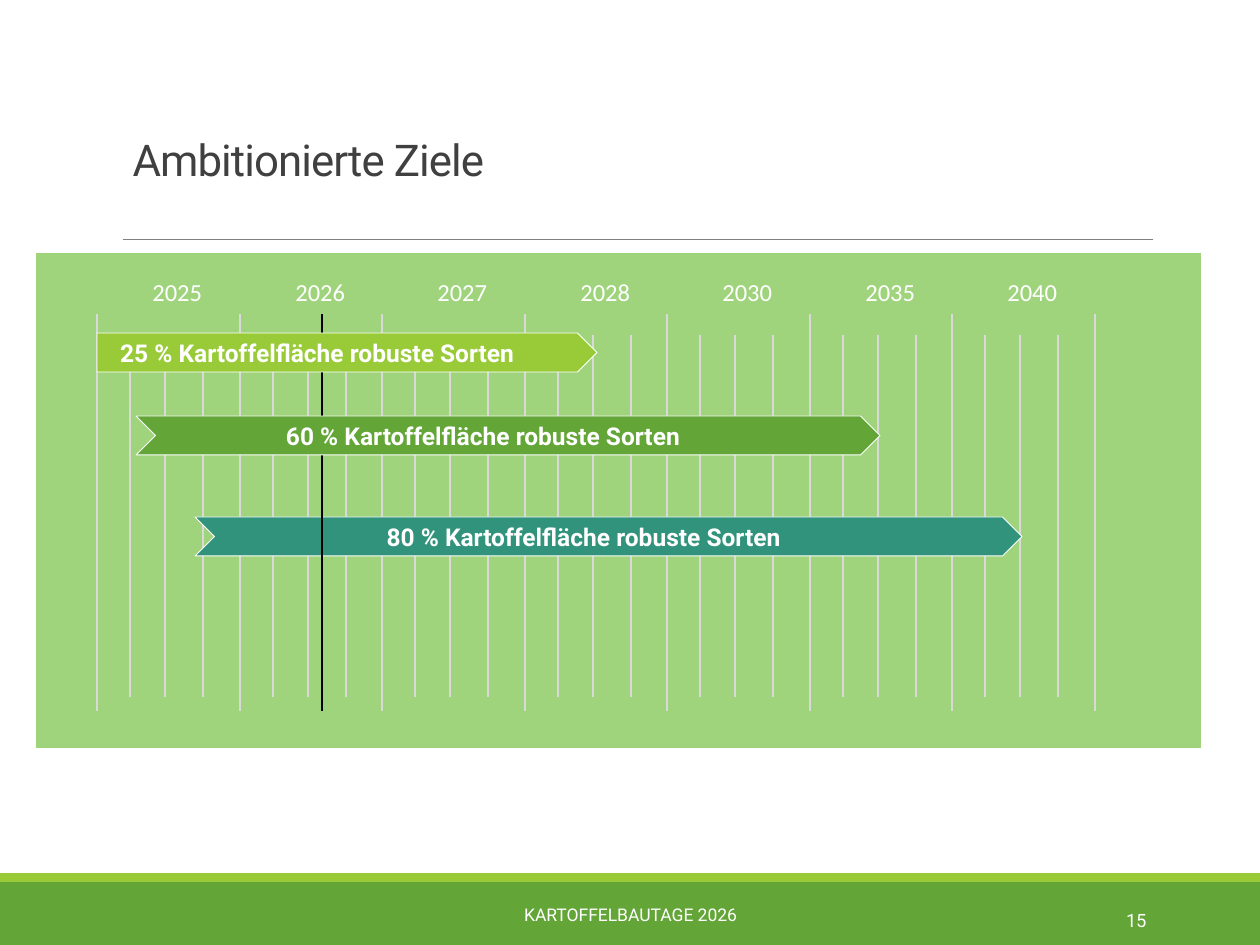
from lxml import etree
from pptx import Presentation
from pptx.dml.color import RGBColor
from pptx.enum.shapes import MSO_CONNECTOR, MSO_SHAPE
from pptx.enum.text import MSO_ANCHOR, MSO_AUTO_SIZE, PP_ALIGN
from pptx.oxml.ns import qn
from pptx.util import Emu, Pt

RECT, PLATE, CHEVRON = MSO_SHAPE.RECTANGLE, MSO_SHAPE.PENTAGON, MSO_SHAPE.CHEVRON
STRAIGHT = MSO_CONNECTOR.STRAIGHT
LEFT, CENTER, RIGHT = PP_ALIGN.LEFT, PP_ALIGN.CENTER, PP_ALIGN.RIGHT
TOP, MIDDLE = MSO_ANCHOR.TOP, MSO_ANCHOR.MIDDLE
SCALE = 914400 / 126
COLORS = {
    "white": "FFFFFF", "black": "000000", "title": "404040", "rule": "808080",
    "grid": "D9D9D9", "panel": "9FD47D", "lime": "99CB38", "green": "63A537",
    "teal": "31937B",
}
YEARS = ["2025", "2026", "2027", "2028", "2030", "2035", "2040"]
START, END = 97, 1095
TICKS = [33, 68, 106]


def px(n):
    return Emu(round(n * SCALE))


def color(name):
    return RGBColor.from_string(COLORS[name])


def write(frame, text, size=14, font="Roboto", ink="white", bold=False,
          align=LEFT, anchor=TOP, space=None, track=None, inset=None):
    frame.word_wrap = True
    frame.auto_size = MSO_AUTO_SIZE.NONE
    frame.vertical_anchor = anchor
    if inset is not None:
        frame.margin_right = px(inset)
    para = frame.paragraphs[0]
    para.alignment = align
    if space:
        para.line_spacing = space
    run = para.add_run()
    run.text = text
    run.font.size = Pt(size)
    run.font.name = font
    run.font.bold = bold
    run.font.color.rgb = color(ink)
    if track:
        run.font._element.set("spc", str(track))


class Deck:
    """Holds the style and the current slide."""

    def __init__(self):
        self.file = Presentation()
        self.file.slide_width, self.file.slide_height = px(1260), px(945)
        self.slide = self.file.slides.add_slide(self.file.slide_layouts[5])
        self.shapes = self.slide.shapes

    def title(self, text, x, y, w, h, **style):
        box = self.shapes.title
        box.left, box.top, box.width, box.height = map(px, (x, y, w, h))
        write(box.text_frame, text, **style)

    def shape(self, kind, x, y, w, h, fill, line=None, width=0.5):
        item = self.shapes.add_shape(kind, *map(px, (x, y, w, h)))
        item.shadow.inherit = False
        item.fill.solid()
        item.fill.fore_color.rgb = color(fill)
        if line:
            item.line.color.rgb = color(line)
            item.line.width = Pt(width)
        else:
            item.line.fill.background()
        return item

    def line(self, x1, y1, x2, y2, ink, width):
        item = self.shapes.add_connector(STRAIGHT, *map(px, (x1, y1, x2, y2)))
        item.line.color.rgb = color(ink)
        item.line.width = Pt(width)
        etree.SubElement(item._element.spPr, qn("a:effectLst"))

    def label(self, text, x, y, w, h, **style):
        box = self.shapes.add_textbox(*map(px, (x, y, w, h)))
        write(box.text_frame, text, **style)

    def goal(self, share, kind, x, y, w, fill):
        item = self.shape(kind, x, y, w, 39, fill, "white")
        write(item.text_frame, f"{share} % Kartoffelfläche robuste Sorten",
              bold=True, align=CENTER, anchor=MIDDLE, inset=62)


def main():
    deck = Deck()
    deck.shape(RECT, 0, 882, 1260, 63, "green")
    deck.shape(RECT, 0, 873, 1260, 9, "lime")
    deck.line(123, 239, 1153, 239, "rule", 0.5)
    deck.title("Ambitionierte Ziele", 120, 135, 1040, 100, size=25,
               ink="title", space=0.85, track=-50)

    deck.shape(RECT, 34, 251, 1169, 499, "panel", "white", 2.25)
    step = (END - START) / len(YEARS)
    edges = [round(START + i * step) for i in range(len(YEARS) + 1)]
    for x in edges:
        deck.line(x, 314, x, 711, "grid", 1.25)
    for x, year in zip(edges, YEARS):
        for tick in TICKS:
            deck.line(x + tick, 335, x + tick, 697, "grid", 1)
        deck.label(year, x + 43, 271, 77, 46, font="Calibri")

    deck.goal(80, CHEVRON, 195, 517, 827, "teal")
    deck.line(322, 314, 322, 711, "black", 1.5)
    deck.goal(25, PLATE, 97, 333, 500, "lime")
    deck.goal(60, CHEVRON, 136, 416, 744, "green")

    deck.label("KARTOFFELBAUTAGE 2026", 381, 890, 499, 50, size=10,
               align=CENTER, anchor=MIDDLE)
    deck.label("15", 1023, 895, 136, 50, size=10.5, align=RIGHT, anchor=MIDDLE)
    deck.file.save("out.pptx")


if __name__ == "__main__":
    main()
